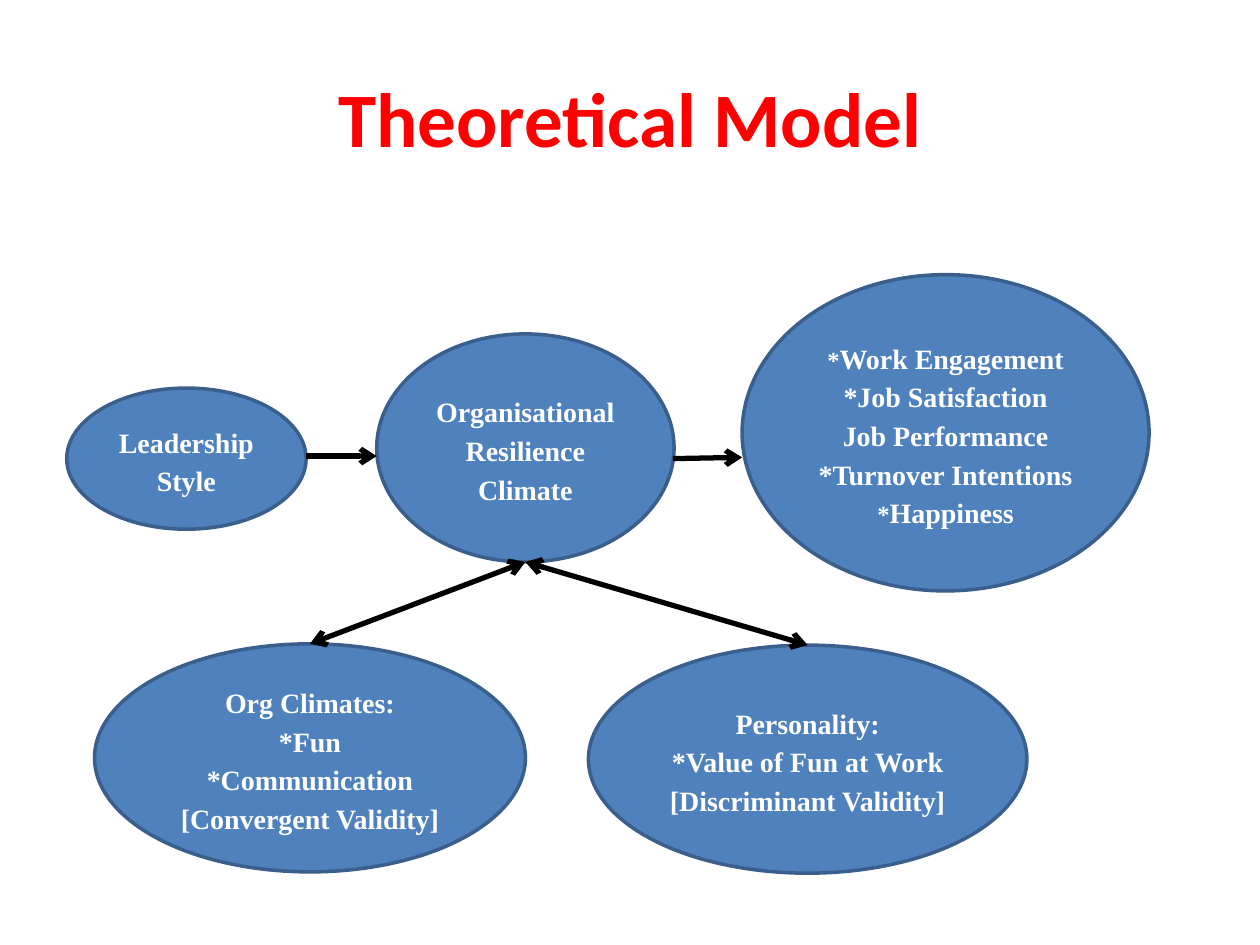
from dataclasses import dataclass

import lxml.etree
import pptx
import pptx.dml.color
import pptx.enum.shapes
import pptx.enum.text
import pptx.oxml.ns
import pptx.util

Inches = pptx.util.Inches


@dataclass(frozen=True)
class Theme:
    title_color: str = "FF0000"
    fill: str = "4F81BD"
    outline: str = "3A5F8C"
    text: str = "FFFFFF"
    arrow: str = "000000"
    title_font: str = "Calibri"
    body_font: str = "Times New Roman"
    title_size: int = 44
    body_size: int = 16
    small_size: int = 14
    outline_width: int = 2
    arrow_width: int = 3
    line_spacing: float = 1.15


def rgb(value):
    return pptx.dml.color.RGBColor.from_string(value)


class ModelSlide:
    def __init__(self, slide, theme):
        self.slide = slide
        self.theme = theme

    def add_run(self, paragraph, text, font, size, color):
        run = paragraph.add_run()
        run.text = text
        run.font.name = font
        run.font.size = pptx.util.Pt(size)
        run.font.bold = True
        run.font.color.rgb = rgb(color)

    def title(self, text, left, top, width, height):
        box = self.slide.shapes.add_textbox(*map(Inches, (left, top, width, height)))
        frame = box.text_frame
        frame.word_wrap = True
        frame.vertical_anchor = pptx.enum.text.MSO_ANCHOR.MIDDLE
        paragraph = frame.paragraphs[0]
        paragraph.alignment = pptx.enum.text.PP_ALIGN.CENTER
        theme = self.theme
        self.add_run(paragraph, text, theme.title_font, theme.title_size, theme.title_color)

    def ellipse(self, lines, left, top, width, height):
        """Each line is a list of (text, size) runs."""
        theme = self.theme
        shape = self.slide.shapes.add_shape(
            pptx.enum.shapes.MSO_SHAPE.OVAL, *map(Inches, (left, top, width, height)))
        shape.shadow.inherit = False
        shape.fill.solid()
        shape.fill.fore_color.rgb = rgb(theme.fill)
        shape.line.color.rgb = rgb(theme.outline)
        shape.line.width = pptx.util.Pt(theme.outline_width)
        frame = shape.text_frame
        frame.word_wrap = True
        frame.vertical_anchor = pptx.enum.text.MSO_ANCHOR.MIDDLE
        for index, line in enumerate(lines):
            paragraph = frame.add_paragraph() if index else frame.paragraphs[0]
            paragraph.alignment = pptx.enum.text.PP_ALIGN.CENTER
            paragraph.line_spacing = theme.line_spacing
            for text, size in line:
                self.add_run(paragraph, text, theme.body_font, size, theme.text)

    def arrow(self, start, end, both_ends=False):
        connector = self.slide.shapes.add_connector(
            pptx.enum.shapes.MSO_CONNECTOR.STRAIGHT, *map(Inches, (*start, *end)))
        connector.line.color.rgb = rgb(self.theme.arrow)
        connector.line.width = pptx.util.Pt(self.theme.arrow_width)
        qn = pptx.oxml.ns.qn
        properties = connector._element.spPr
        line = properties.find(qn("a:ln"))
        for tag in ("a:headEnd", "a:tailEnd") if both_ends else ("a:tailEnd",):
            lxml.etree.SubElement(line, qn(tag), type="arrow")
        lxml.etree.SubElement(properties, qn("a:effectLst"))


def main():
    presentation = pptx.Presentation()
    presentation.slide_width = Inches(10)
    presentation.slide_height = Inches(7.5)
    theme = Theme()
    model = ModelSlide(presentation.slides.add_slide(presentation.slide_layouts[6]), theme)

    def plain(*texts):
        return [[(text, theme.body_size)] for text in texts]

    def small_star(text):
        return [("*", theme.small_size), (text, theme.body_size)]

    # Title
    model.title("Theoretical Model", 0.5, 0.3, 9, 1.25)

    # Main path: leadership, climate, outcomes
    model.ellipse(plain("Leadership", "Style"), 0.53, 3.08, 1.9, 1.12)
    model.ellipse(plain("Organisational", "Resilience", "Climate"), 2.99, 2.65, 2.36, 1.81)
    outcomes = [
        small_star("Work Engagement"),
        *plain("*Job Satisfaction", "Job Performance", "*Turnover Intentions"),
        small_star("Happiness"),
    ]
    model.ellipse(outcomes, 5.89, 2.18, 3.23, 2.51)

    # Validity constructs
    model.ellipse(plain("Org Climates:", "*Fun", "*Communication", "[Convergent Validity]"),
                  0.75, 5.11, 3.42, 1.81)
    model.ellipse(plain("Personality:", "*Value of Fun at Work", "[Discriminant Validity]"),
                  4.67, 5.12, 3.48, 1.81)

    # Arrows
    climate_bottom = (4.17, 4.46)
    model.arrow((2.43, 3.62), (2.99, 3.62))
    model.arrow((5.34, 3.64), (5.89, 3.63))
    model.arrow(climate_bottom, (2.46, 5.11), both_ends=True)
    model.arrow((6.41, 5.12), climate_bottom, both_ends=True)

    presentation.save("out.pptx")


if __name__ == "__main__":
    main()
